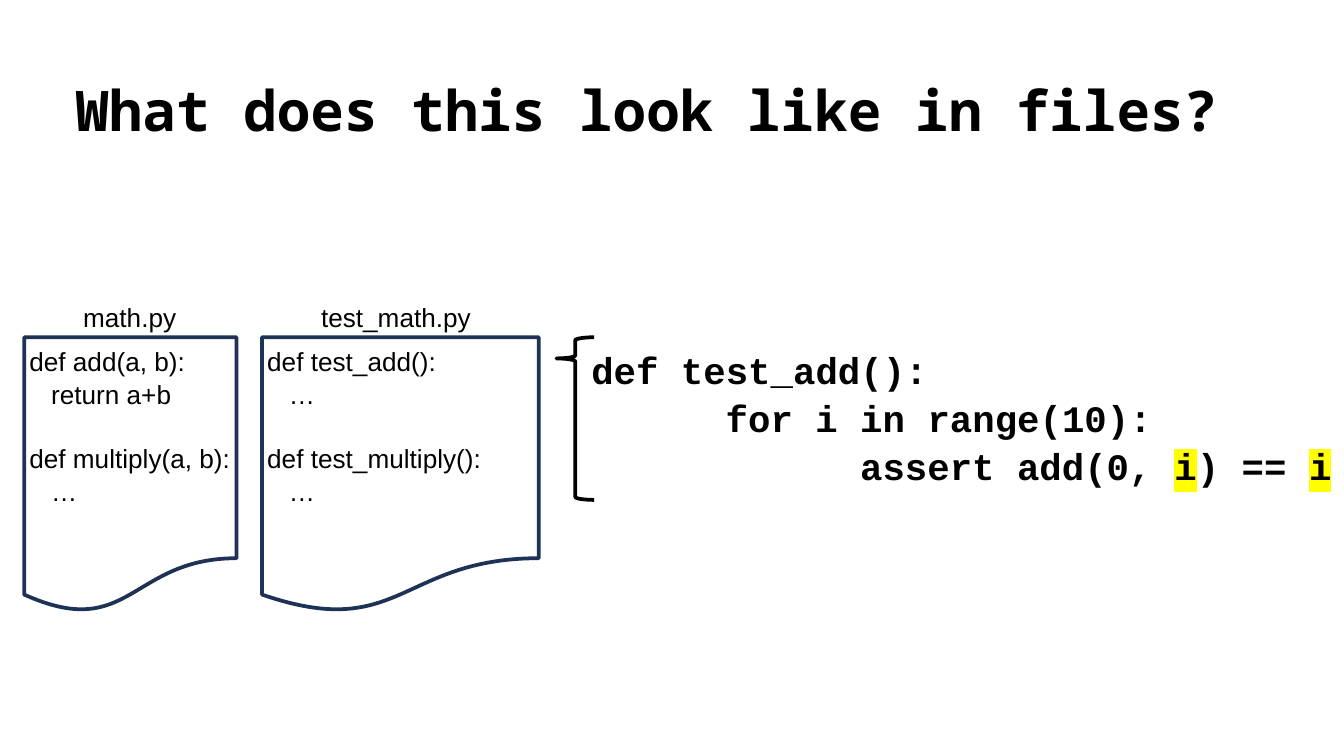
import pptx
import pptx.util
import pptx.dml.color
import pptx.enum.shapes
import pptx.enum.text
import pptx.oxml
import pptx.oxml.ns

Pt = pptx.util.Pt
SHAPE = pptx.enum.shapes.MSO_SHAPE
ANCHOR = pptx.enum.text.MSO_ANCHOR
ALIGN = pptx.enum.text.PP_ALIGN
FIT = pptx.enum.text.MSO_AUTO_SIZE
TOP = 180.72
INK, NAVY, WHITE, YELLOW = "000000", "1E3256", "FFFFFF", "FFFF00"


def tint(code):
    return pptx.dml.color.RGBColor.from_string(code)


def make(tag, **attrs):
    item = pptx.oxml.parse_xml(f"<a:{tag} {pptx.oxml.ns.nsdecls('a')}/>")
    for key, value in attrs.items():
        item.set(key, str(value))
    return item


def add_run(para, text, face, size, bold=False, mark=None):
    run = para.add_run()
    run.text = text
    font = run.font
    font.name, font.size, font.bold = face, Pt(size), bold
    font.color.rgb = tint(INK)
    if mark:
        light = make("highlight")
        light.append(make("srgbClr", val=mark))
        fill = run._r.get_or_add_rPr().find(pptx.oxml.ns.qn("a:solidFill"))
        fill.addnext(light)


def add_shape(slide, kind, left, top, width, height, line=None, fill=None):
    shape = slide.shapes.add_shape(kind, Pt(left), Pt(top), Pt(width), Pt(height))
    shape.shadow.inherit = False
    if fill:
        shape.fill.solid()
        shape.fill.fore_color.rgb = tint(fill)
    else:
        shape.fill.background()
    if line:
        shape.line.color.rgb = tint(line)
        shape.line.width = Pt(2)
    else:
        shape.line.fill.background()
    return shape


def add_text(slide, left, top, width, height, blocks):
    """Add plain lines; each block after the first follows a one-line gap."""
    box = slide.shapes.add_textbox(Pt(left), Pt(top), Pt(width), Pt(height))
    frame = box.text_frame
    frame.word_wrap = False
    frame.auto_size = FIT.SHAPE_TO_FIT_TEXT
    for b, block in enumerate(blocks):
        for n, text in enumerate(block):
            para = frame.add_paragraph() if b or n else frame.paragraphs[0]
            para.line_spacing = 1.05
            if b and not n:
                para.space_before = Pt(16.9)
            add_run(para, text, "Arial", 14)


def add_file(slide, left, width, name, label, code):
    """Draw a file page with its name above and its code inside."""
    add_shape(slide, SHAPE.FLOWCHART_DOCUMENT, left, TOP, width, 147.6, line=NAVY)
    add_text(slide, left + 24.5, 156.96, label, 24.48, [[name]])
    reach = 122.4 if width < 120 else 129.6
    add_text(slide, left - 4.32, TOP, reach, 92.16, code)


def add_code(slide, lines):
    """Add the large listing; each run is a text and its marker colour."""
    panel = add_shape(slide, SHAPE.RECTANGLE, 303.84, TOP, 432, 79.92, fill=WHITE)
    frame = panel.text_frame
    frame.word_wrap = True
    frame.vertical_anchor = ANCHOR.TOP
    frame.margin_left = Pt(12.96)
    for n, runs in enumerate(lines):
        para = frame.add_paragraph() if n else frame.paragraphs[0]
        para.alignment = ALIGN.LEFT
        para.line_spacing = 1.07
        tabs = make("tabLst")
        for stop in (72, 144):
            tabs.append(make("tab", pos=int(Pt(stop)), algn="l"))
        para._p.get_or_add_pPr().append(tabs)
        for text, mark in runs:
            add_run(para, text, "Courier New", 20, True, mark)


def add_title(slide, text):
    title = slide.shapes.title
    title.left, title.top = Pt(35.28), Pt(36.72)
    title.width, title.height = Pt(645.12), Pt(43.92)
    frame = title.text_frame
    frame.margin_left = frame.margin_right = Pt(5.04)
    frame.margin_top = frame.margin_bottom = Pt(2.88)
    frame.vertical_anchor = ANCHOR.MIDDLE
    frame.word_wrap = True
    para = frame.paragraphs[0]
    para.alignment = ALIGN.LEFT
    add_run(para, text, "Noto Sans Mono", 30, True)


def main():
    deck = pptx.Presentation()
    deck.slide_width, deck.slide_height = Pt(720), Pt(405)
    slide = deck.slides.add_slide(deck.slide_layouts[5])
    add_title(slide, "What does this look like in files?")
    add_file(slide, 12.96, 113.76, "math.py", 64.8,
             [["def add(a, b):", "   return a+b"],
              ["def multiply(a, b):", "   …"]])
    add_file(slide, 140.4, 148.32, "test_math.py", 95.04,
             [["def test_add():", "   …"],
              ["def test_multiply():", "   …"]])
    add_code(slide, [
        [("def test_add():", None)],
        [("\tfor i in range(10):", None)],
        [("\t\tassert add(0, ", None), ("i", YELLOW),
         (") == ", None), ("i", YELLOW)],
    ])
    brace = add_shape(slide, SHAPE.LEFT_BRACE, 298.08, TOP, 20.16, 87.12, line=INK)
    brace.adjustments[0], brace.adjustments[1] = 0.08, 0.13
    deck.save("out.pptx")


if __name__ == "__main__":
    main()
